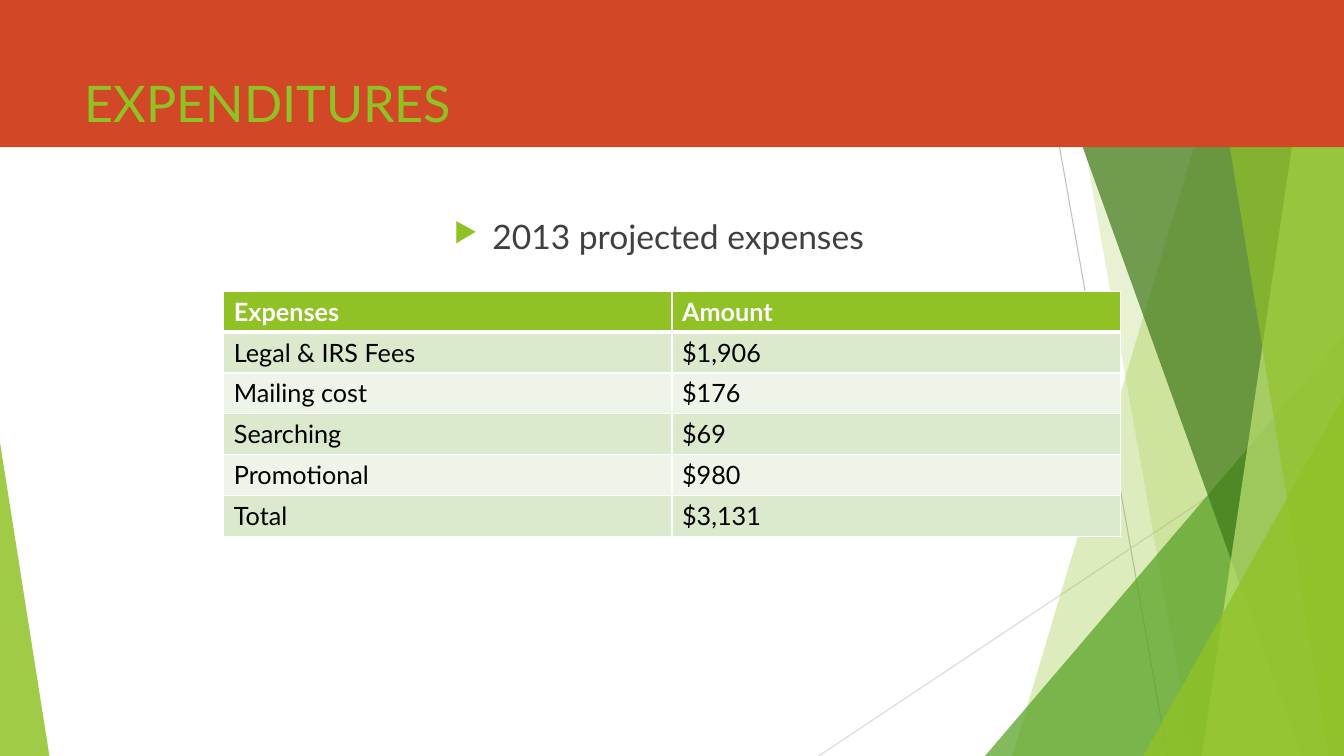
import pptx
import pptx.util
import pptx.dml.color
import pptx.enum.shapes
import pptx.enum.text
import pptx.oxml
import pptx.oxml.ns
import lxml.etree

Inches = pptx.util.Inches
Pt = pptx.util.Pt
SHAPE = pptx.enum.shapes.MSO_SHAPE
WIDE, HIGH = 13.33, 7.5
LIME = "90C226"

EXPENSES = [
    ("Expenses", "Amount"),
    ("Legal & IRS Fees", "$1,906"),
    ("Mailing cost", "$176"),
    ("Searching", "$69"),
    ("Promotional", "$980"),
    ("Total", "$3,131"),
]
# x at the top, x at the bottom, colour, opacity
BANDS_BACK = [(12.28, 10.04, LIME, 30), (10.5, 11.83, LIME, 20)]
BANDS_FRONT = [(10.21, 12.91, "3F7819", 70), (13.03, 11.92, "C0E474", 70),
               (11.96, 13.18, LIME, 65)]


def color(code):
    return pptx.dml.color.RGBColor.from_string(code)


def node(parent, tag, **attrs):
    """Append an XML element such as a:ln to the parent."""
    item = lxml.etree.SubElement(parent, pptx.oxml.ns.qn(tag))
    for key, value in attrs.items():
        item.set(key, str(value))
    return item


def paint(shape, code, alpha=100):
    shape.shadow.inherit = False
    shape.line.fill.background()
    shape.fill.solid()
    shape.fill.fore_color.rgb = color(code)
    if alpha < 100:
        tint = shape.fill._xPr.find(".//" + pptx.oxml.ns.qn("a:srgbClr"))
        node(tint, "a:alpha", val=alpha * 1000)


def write(para, text, size, code, bold=False):
    run = para.add_run()
    run.text = text
    run.font.name = "Lato"
    run.font.size = Pt(size)
    run.font.bold = bold
    run.font.color.rgb = color(code)


def line(slide, start, end, code):
    link = slide.shapes.add_connector(
        pptx.enum.shapes.MSO_CONNECTOR.STRAIGHT,
        *[Inches(n) for n in (*start, *end)])
    link.line.color.rgb = color(code)
    link.line.width = Pt(0.75)
    node(link._element.spPr, "a:effectLst")


def band(slide, top, foot, code, alpha):
    """Draw a slanted band that runs to the right edge of the slide."""
    pen = slide.shapes.build_freeform(Inches(top), Inches(-0.01))
    pen.add_line_segments([(Inches(x), Inches(y)) for x, y in
                           ((WIDE, -0.01), (WIDE, HIGH), (foot, HIGH))])
    paint(pen.convert_to_shape(), code, alpha)


def wedge(slide, left, width, height, peak, code, alpha):
    """Stand a triangle on the bottom edge of the slide."""
    shape = slide.shapes.add_shape(
        SHAPE.ISOSCELES_TRIANGLE, Inches(left), Inches(HIGH - height),
        Inches(width), Inches(height))
    shape.adjustments[0] = peak
    paint(shape, code, alpha)


def decor(slide):
    line(slide, (10.25, 0), (11.58, HIGH), "BFBFBF")
    line(slide, (WIDE, 4.03), (8.12, HIGH), "D9D9D9")
    for item in BANDS_BACK:
        band(slide, *item)
    wedge(slide, 9.77, 3.56, 4.17, 1, "54A021", 72)
    for item in BANDS_FRONT:
        band(slide, *item)
    wedge(slide, 11.34, 1.99, 3.57, 1, LIME, 80)
    wedge(slide, 0, 0.49, 3.11, 0, LIME, 85)


def textbox(slide, box):
    frame = slide.shapes.add_textbox(*[Inches(n) for n in box]).text_frame
    frame.word_wrap = True
    return frame.paragraphs[0]


def header(slide, box):
    left, top, width, height = box
    bar = slide.shapes.add_shape(SHAPE.RECTANGLE, *[Inches(n) for n in box])
    paint(bar, "D24726")
    para = textbox(slide, (left + 0.74, top + 0.67, 9.4, 1.44))
    write(para, "EXPENDITURES", 36, LIME)


def bullet(slide, box):
    para = textbox(slide, box)
    para.alignment = pptx.enum.text.PP_ALIGN.CENTER
    para.line_spacing = 1.5
    para.space_before = Pt(10)
    props = para._p.get_or_add_pPr()
    props.set("marL", str(Inches(0.38)))
    props.set("indent", str(Inches(-0.38)))
    node(node(props, "a:buClr"), "a:srgbClr", val=LIME)
    node(props, "a:buSzPct", val=80000)
    node(props, "a:buChar", char="▶")
    write(para, "2013 projected expenses", 24, "404040")


def border(cell, foot):
    """Give a cell white edges, with the bottom one foot points wide."""
    props = cell._tc.get_or_add_tcPr()
    for side, width in (("L", 1), ("R", 1), ("T", 1), ("B", foot)):
        edge = node(props, "a:ln" + side, w=Pt(width))
        node(node(edge, "a:solidFill"), "a:srgbClr", val="FFFFFF")


def costs(slide, box):
    grid = slide.shapes.add_table(
        len(EXPENSES), 2, *[Inches(n) for n in box]).table
    for r, texts in enumerate(EXPENSES):
        head = r == 0
        fill = LIME if head else ("EEF4E8", "DBE9CD")[r % 2]
        for c, text in enumerate(texts):
            cell = grid.cell(r, c)
            border(cell, 3 if head else 1)
            cell.fill.solid()
            cell.fill.fore_color.rgb = color(fill)
            write(cell.text_frame.paragraphs[0], text, 18,
                  "FFFFFF" if head else "000000", head)


def main():
    deck = pptx.Presentation()
    deck.slide_width, deck.slide_height = Inches(WIDE), Inches(HIGH)
    slide = deck.slides.add_slide(deck.slide_layouts[6])
    decor(slide)
    header(slide, (0, 0, WIDE, 1.46))
    bullet(slide, (0.93, 1.89, 11.21, 4.86))
    costs(slide, (2.22, 2.89, 8.89, 2.43))
    deck.save("out.pptx")


if __name__ == "__main__":
    main()
